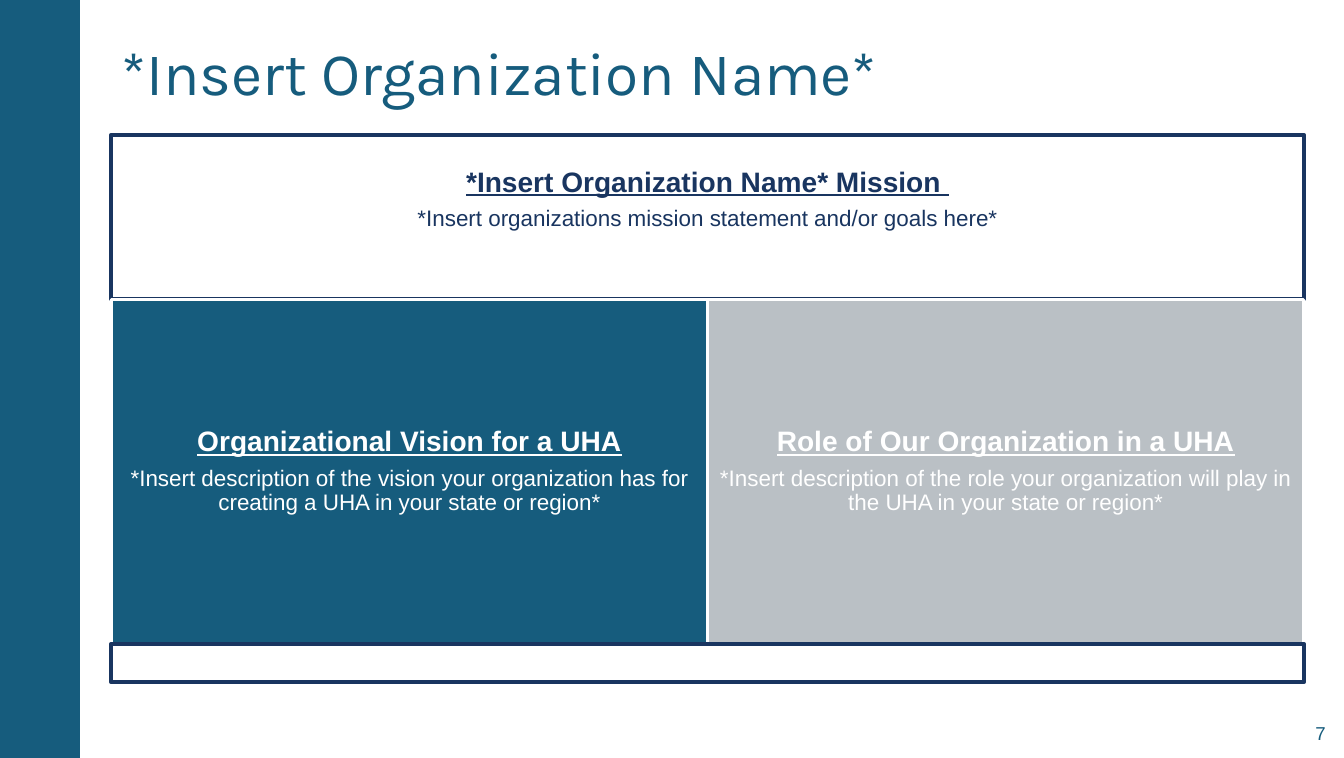
import pptx
import pptx.dml.color
import pptx.enum.shapes
import pptx.enum.text
import pptx.util

Cm, Pt = pptx.util.Cm, pptx.util.Pt
RGB = pptx.dml.color.RGBColor
ALIGN = pptx.enum.text.PP_ALIGN
MIDDLE = pptx.enum.text.MSO_ANCHOR.MIDDLE
RECT = pptx.enum.shapes.MSO_SHAPE.RECTANGLE

TEAL = RGB(0x16, 0x5C, 0x7D)
NAVY = RGB(0x19, 0x35, 0x60)
GRAY = RGB(0xBA, 0xC0, 0xC5)
WHITE = RGB(0xFF, 0xFF, 0xFF)

# Content
TITLE = "*Insert Organization Name*"
NUMBER = "7"
MISSION = ("*Insert Organization Name* Mission ",
           "*Insert organizations mission statement and/or goals here*")
PILLARS = [
    ("Organizational Vision for a UHA",
     "*Insert description of the vision your organization has for "
     "creating a UHA in your state or region*", TEAL),
    ("Role of Our Organization in a UHA",
     "*Insert description of the role your organization will play in "
     "the UHA in your state or region*", GRAY),
]

# Layout in cm: three rows stacked below the title
PAGE_W, PAGE_H = 33.78, 19.05
LEFT, TOP, WIDTH = 2.8, 3.39, 29.97
HEAD, BODY, BASE = 4.13, 8.66, 0.97
PAD = 0.21
LIFT = 1.08  # bottom inset that raises the mission text


def write(para, text, size, color, font="Arial", strong=False):
    run = para.add_run()
    run.text = text
    run.font.name = font
    run.font.size = Pt(size)
    run.font.color.rgb = color
    run.font.bold = run.font.underline = strong


def box(slide, x, y, w, h, fill=None, line=None, weight=0):
    shape = slide.shapes.add_shape(RECT, Cm(x), Cm(y), Cm(w), Cm(h))
    shape.shadow.inherit = False
    if fill is None:
        shape.fill.background()
    else:
        shape.fill.solid()
        shape.fill.fore_color.rgb = fill
    if line is None:
        shape.line.fill.background()
    else:
        shape.line.color.rgb = line
        shape.line.width = Pt(weight)
    return shape


def label(shape, head, body, color, bottom=PAD):
    frame = shape.text_frame
    frame.word_wrap = True
    frame.vertical_anchor = MIDDLE
    frame.margin_left = frame.margin_right = frame.margin_top = Cm(PAD)
    frame.margin_bottom = Cm(bottom)
    first, second = frame.paragraphs[0], frame.add_paragraph()
    for para in (first, second):
        para.alignment = ALIGN.CENTER
        para.line_spacing = 0.9
    first.space_after = Pt(6.5)
    second.space_after = Pt(5.5)
    write(first, head, 20, color, strong=True)
    write(second, body, 16, color)


def main():
    deck = pptx.Presentation()
    deck.slide_width, deck.slide_height = Cm(PAGE_W), Cm(PAGE_H)
    slide = deck.slides.add_slide(deck.slide_layouts[5])

    # Side band and title
    box(slide, 0, 0, 2.01, PAGE_H, TEAL)
    title = slide.shapes.title
    title.left, title.top = Cm(LEFT), Cm(0.71)
    title.width, title.height = Cm(29.29), Cm(2.16)
    frame = title.text_frame
    frame.auto_size = pptx.enum.text.MSO_AUTO_SIZE.NONE
    frame.vertical_anchor = MIDDLE
    frame.paragraphs[0].alignment = ALIGN.LEFT
    write(frame.paragraphs[0], TITLE, 43.1, TEAL, "Karla")

    # Mission row
    top = box(slide, LEFT, TOP, WIDTH, HEAD, WHITE, NAVY, 3)
    label(top, *MISSION, NAVY, LIFT)

    # Pillars, equal widths
    wide = WIDTH / len(PILLARS)
    for i, (head, body, fill) in enumerate(PILLARS):
        part = box(slide, LEFT + i * wide, TOP + HEAD, wide, BODY,
                   fill, WHITE, 2)
        label(part, head, body, WHITE)

    # Base row
    box(slide, LEFT, TOP + HEAD + BODY, WIDTH, BASE, line=NAVY, weight=3)

    # Slide number
    note = slide.shapes.add_textbox(Cm(30.45), Cm(17.91), Cm(3.12), Cm(1.02))
    note.text_frame.word_wrap = True
    note.text_frame.vertical_anchor = MIDDLE
    para = note.text_frame.paragraphs[0]
    para.alignment = ALIGN.RIGHT
    write(para, NUMBER, 13.3, TEAL)

    deck.save("out.pptx")


if __name__ == "__main__":
    main()
